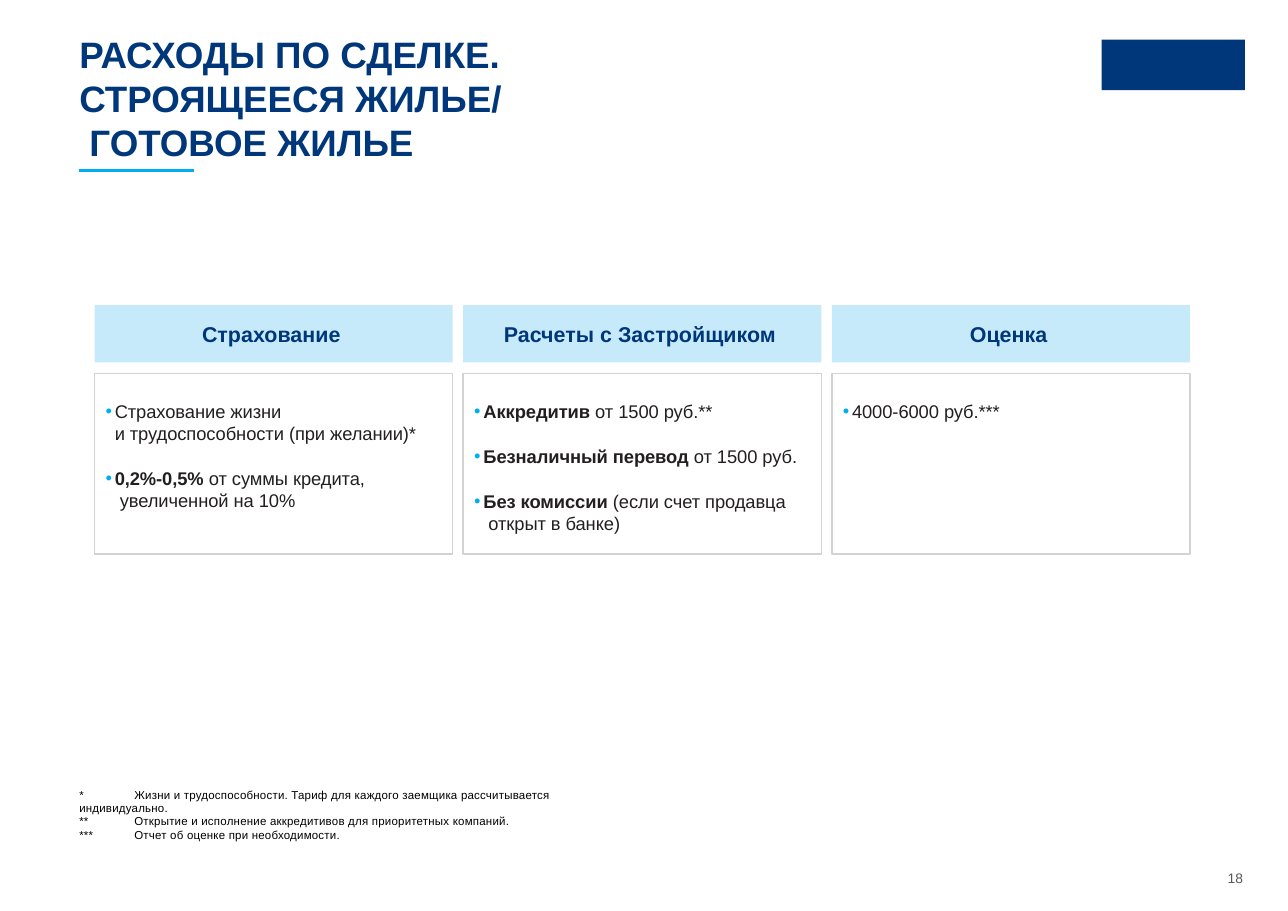
"""Build the slide on deal costs for housing under construction and finished housing."""
from dataclasses import dataclass

from lxml import etree
from pptx import Presentation
from pptx import util as u
from pptx.dml.color import RGBColor
from pptx.enum import shapes, text
from pptx.oxml import ns
from pptx.shapes.base import BaseShape
from pptx.slide import Slide
from pptx.text import text as tx

NAVY = RGBColor(0x00, 0x37, 0x7B)
CYAN = RGBColor(0x00, 0xAE, 0xEF)
PALE_BLUE = RGBColor(0xC7, 0xEA, 0xFB)
BORDER_GREY = RGBColor(0xD1, 0xD3, 0xD4)
PAGE_GREY = RGBColor(0x58, 0x59, 0x5B)
INK = RGBColor(0x23, 0x1F, 0x20)
BLACK = RGBColor(0x00, 0x00, 0x00)

FONT = "Arial"
MARGIN_LEFT = 51.8
COLUMN_LEFT, COLUMN_STEP, COLUMN_WIDTH = 61.8, 240.9, 234
HEADER_TOP, HEADER_HEIGHT = 199.4, 37.6
CARD_TOP, CARD_HEIGHT = 244.2, 118


@dataclass(frozen=True)
class Item:
    lead: str
    detail: str


@dataclass(frozen=True)
class Column:
    heading: str
    items: tuple[Item, ...]


@dataclass(frozen=True)
class Footnote:
    mark: str
    wording: str
    stop: float


COLUMNS = (
    Column("Страхование", (
        Item("", "Страхование жизни\vи трудоспособности (при желании)*"),
        Item("0,2%-0,5%", " от суммы кредита,\v увеличенной на 10%"),
    )),
    Column("Расчеты с Застройщиком", (
        Item("Аккредитив", " от 1500 руб.**"),
        Item("Безналичный перевод", " от 1500 руб."),
        Item("Без комиссии", " (если счет продавца\v открыт в банке)"),
    )),
    Column("Оценка", (Item("", "4000-6000 руб.***"),)),
)
FOOTNOTES = (
    Footnote("*", "Жизни и трудоспособности. Тариф для каждого заемщика "
             "рассчитывается индивидуально.", 72),
    Footnote("**", "Открытие и исполнение аккредитивов для приоритетных компаний.", 15),
    Footnote("***", "Отчет об оценке при необходимости.", 13.75),
)


def place(shape: BaseShape, left: float, top: float, width: float, height: float) -> None:
    shape.left, shape.top = u.Pt(left), u.Pt(top)
    shape.width, shape.height = u.Pt(width), u.Pt(height)


def prepare(frame: tx.TextFrame, top: float = 0, right: float = 0,
            anchor: text.MSO_ANCHOR = text.MSO_ANCHOR.TOP) -> None:
    frame.word_wrap = True
    frame.auto_size = text.MSO_AUTO_SIZE.NONE
    frame.vertical_anchor = anchor
    frame.margin_left = frame.margin_bottom = u.Pt(0)
    frame.margin_top, frame.margin_right = u.Pt(top), u.Pt(right)


def paragraph_at(frame: tx.TextFrame, index: int) -> tx._Paragraph:
    return frame.add_paragraph() if index else frame.paragraphs[0]


def add_text(paragraph: tx._Paragraph, words: str, size: float, color: RGBColor,
             bold: bool = False, spacing: float = 0) -> None:
    for index, line in enumerate(words.split("\v")):
        if index:
            paragraph.add_line_break()
        run = paragraph.add_run()
        run.text = line
        run.font.name, run.font.size = FONT, u.Pt(size)
        run.font.bold, run.font.color.rgb = bold, color
        run._r.get_or_add_rPr().set("spc", str(round(spacing * 100)))


def set_spacing(paragraph: tx._Paragraph, line: float, after: float = 0) -> None:
    paragraph.alignment = text.PP_ALIGN.LEFT
    paragraph.line_spacing = u.Pt(line)
    paragraph.space_before, paragraph.space_after = u.Pt(0), u.Pt(after)


def set_indent(paragraph: tx._Paragraph, left: float, first: float) -> etree._Element:
    properties = paragraph._p.get_or_add_pPr()
    properties.set("marL", str(u.Pt(left)))
    properties.set("indent", str(u.Pt(first)))
    return properties


def add_bullet(paragraph: tx._Paragraph) -> None:
    properties = set_indent(paragraph, 13.2, -6)
    color = etree.SubElement(properties, ns.qn("a:buClr"))
    etree.SubElement(color, ns.qn("a:srgbClr"), val=str(CYAN))
    etree.SubElement(properties, ns.qn("a:buFont"), typeface=FONT)
    etree.SubElement(properties, ns.qn("a:buChar"), char="•")


def add_tab_stop(paragraph: tx._Paragraph, stop: float) -> None:
    properties = set_indent(paragraph, 0, 0)
    etree.SubElement(properties, ns.qn("a:buNone"))
    stops = etree.SubElement(properties, ns.qn("a:tabLst"))
    etree.SubElement(stops, ns.qn("a:tab"), pos=str(u.Pt(stop)), algn="l")


def add_block(slide: Slide, left: float, top: float, width: float, height: float,
              color: RGBColor) -> BaseShape:
    block = slide.shapes.add_shape(shapes.MSO_SHAPE.RECTANGLE, u.Pt(left), u.Pt(top),
                                   u.Pt(width), u.Pt(height))
    block.shadow.inherit = False
    block.fill.solid()
    block.fill.fore_color.rgb = color
    block.line.fill.background()
    return block


def draw_title(slide: Slide) -> None:
    title = slide.shapes.title
    place(title, MARGIN_LEFT, 20.9, 330, 88)
    prepare(title.text_frame)
    heading = title.text_frame.paragraphs[0]
    set_spacing(heading, 28.8)
    add_text(heading, "РАСХОДЫ ПО СДЕЛКЕ.\vСТРОЯЩЕЕСЯ ЖИЛЬЕ/\v ГОТОВОЕ ЖИЛЬЕ",
             24, NAVY, bold=True)
    underline = slide.shapes.add_connector(
        shapes.MSO_CONNECTOR.STRAIGHT, u.Pt(MARGIN_LEFT), u.Pt(111.4), u.Pt(126.7), u.Pt(111.4))
    underline.line.color.rgb, underline.line.width = CYAN, u.Pt(2)
    etree.SubElement(underline._element.spPr, ns.qn("a:effectLst"))


def draw_column(slide: Slide, column: Column, left: float, card: BaseShape) -> None:
    header = add_block(slide, left, HEADER_TOP, COLUMN_WIDTH, HEADER_HEIGHT, PALE_BLUE)
    prepare(header.text_frame, right=3, anchor=text.MSO_ANCHOR.MIDDLE)
    heading = header.text_frame.paragraphs[0]
    heading.alignment = text.PP_ALIGN.CENTER
    add_text(heading, column.heading, 14, NAVY, bold=True)

    place(card, left, CARD_TOP, COLUMN_WIDTH, CARD_HEIGHT)
    card.line.color.rgb, card.line.width = BORDER_GREY, u.Pt(1)
    prepare(card.text_frame, top=17.5)
    for index, item in enumerate(column.items):
        paragraph = paragraph_at(card.text_frame, index)
        set_spacing(paragraph, 14.4, after=15)
        add_bullet(paragraph)
        if item.lead:
            add_text(paragraph, item.lead, 12, INK, bold=True, spacing=-0.05)
        add_text(paragraph, item.detail, 12, INK, spacing=-0.05)


def draw_footnotes(slide: Slide, notes: BaseShape) -> None:
    place(notes, MARGIN_LEFT, 515, 352, 36)
    prepare(notes.text_frame)
    for index, note in enumerate(FOOTNOTES):
        paragraph = paragraph_at(notes.text_frame, index)
        set_spacing(paragraph, 8.8)
        add_tab_stop(paragraph, note.stop)
        add_text(paragraph, f"{note.mark}\t{note.wording}", 7.5, BLACK, spacing=0.1)


def draw_page_number(slide: Slide) -> None:
    page = slide.shapes.add_textbox(u.Pt(790), u.Pt(568.8), u.Pt(22.3), u.Pt(12.2))
    prepare(page.text_frame)
    number = page.text_frame.paragraphs[0]
    number.alignment = text.PP_ALIGN.RIGHT
    add_text(number, "18", 9, PAGE_GREY)


def main() -> None:
    deck = Presentation()
    deck.slide_width, deck.slide_height = u.Pt(841.68), u.Pt(595.44)
    slide = deck.slides.add_slide(deck.slide_layouts.get_by_name("Comparison"))
    *cards, notes = [part for part in slide.placeholders if part.placeholder_format.idx]
    add_block(slide, 720, 26, 93.6, 33, NAVY)
    draw_title(slide)
    for index, (column, card) in enumerate(zip(COLUMNS, cards)):
        draw_column(slide, column, COLUMN_LEFT + COLUMN_STEP * index, card)
    draw_footnotes(slide, notes)
    draw_page_number(slide)
    deck.save("out.pptx")


if __name__ == "__main__":
    main()
